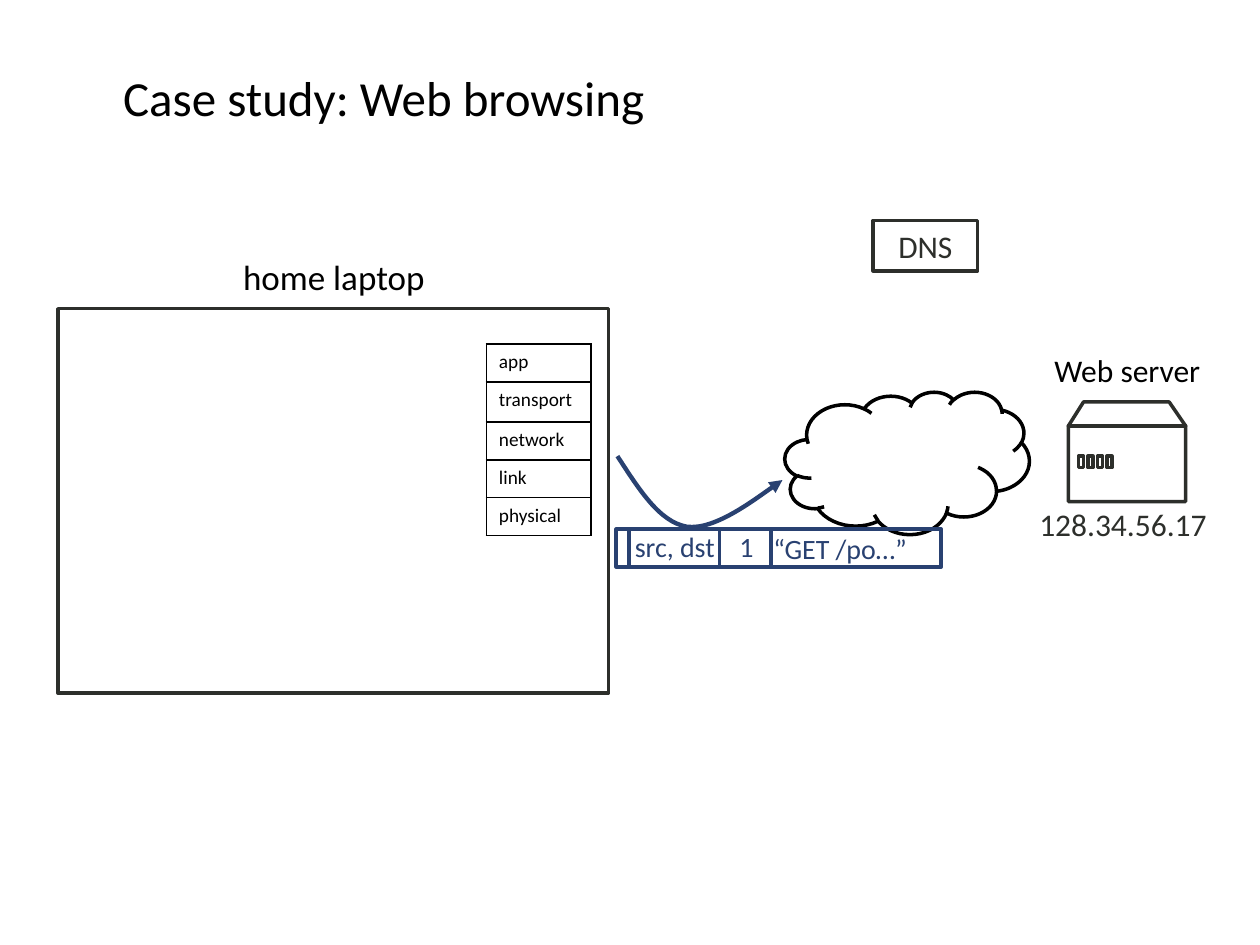
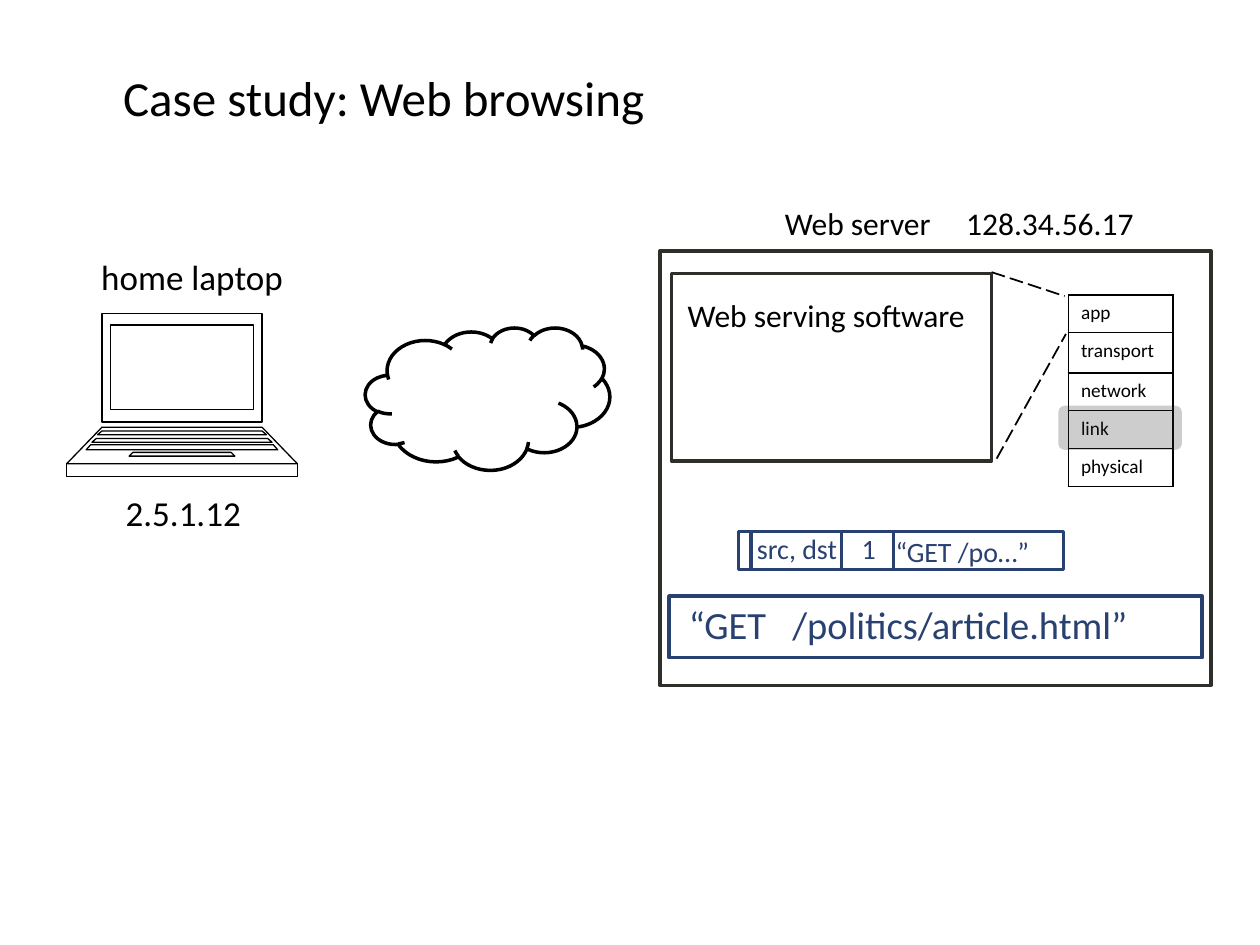
"""Build two slides that follow a web request from a home laptop to a web server."""
from itertools import accumulate

from pptx import Presentation
from pptx.dml.color import RGBColor
from pptx.enum.dml import MSO_LINE
from pptx.enum.shapes import MSO_CONNECTOR, MSO_SHAPE
from pptx.enum.text import MSO_ANCHOR, PP_ALIGN
from pptx.oxml import parse_xml
from pptx.oxml.ns import nsdecls, qn
from pptx.util import Inches, Pt


class T:
    font = "Calibri"
    black = RGBColor.from_string("000000")
    white = RGBColor.from_string("FFFFFF")
    dark = RGBColor.from_string("2D2F2B")
    blue = RGBColor.from_string("294171")
    title, request, heading, label, packet, layer = 28, 22, 20, 18, 16, 11
    hair, thin, line, arrow = 0.75, 1, 2, 2.5


def write(tf, text, size, color=T.black, align=PP_ALIGN.LEFT, tab=None):
    p = tf.paragraphs[0]
    p.alignment = align
    if tab:
        p._p.get_or_add_pPr().append(parse_xml(
            f'<a:tabLst {nsdecls("a")}><a:tab pos="{Inches(tab)}" algn="l"/></a:tabLst>'))
    r = p.add_run()
    r.text = text
    r.font.color.rgb = color
    for name, value in {"name": T.font, "size": Pt(size), "bold": False}.items():
        setattr(r.font, name, value)


def add(s, at, kind=None, line=None, fill=None, text=None, **style):
    at = [Inches(v) for v in at]
    if kind is None:
        sp = s.shapes.add_textbox(*at)
    else:
        sp = s.shapes.add_shape(kind, *at)
        sp.shadow.inherit = False
        if fill is None:
            sp.fill.background()
        else:
            sp.fill.solid()
            sp.fill.fore_color.rgb = fill
        if line is None:
            sp.line.fill.background()
        else:
            sp.line.color.rgb = line
            sp.line.width = Pt(T.line)
    if text:
        sp.text_frame.word_wrap = True
        sp.text_frame.vertical_anchor = MSO_ANCHOR.MIDDLE if kind else MSO_ANCHOR.TOP
        write(sp.text_frame, text, **style)
    return sp


RECT = MSO_SHAPE.RECTANGLE
CENTER = PP_ALIGN.CENTER
layers = ["app", "transport", "network", "link", "physical"]
row_heights = [0.3, 0.32, 0.3, 0.3, 0.3]
field_widths = [0.1, 0.72, 0.41, 1.35]
field_texts = [("src, dst", 0.05, -0.05, 0.9), ("1", 0.88, -0.05, 0.24),
               ("“GET /po…”", 1.15, -0.03, 1.66)]

prs = Presentation()
prs.slide_width, prs.slide_height = Inches(10), Inches(7.5)
places = [
    {"cloud": (6.23, 3.11), "laptop": (0.46, 4.38), "host": (0.46, 2.45, 4.37, 3.05),
     "stack": (3.86, 2.73), "packet": (4.89, 4.2)},
    {"cloud": (2.9, 2.6), "laptop": (0.39, 2.27), "host": (5.24, 1.99, 4.37, 3.45),
     "stack": (8.48, 2.34), "packet": (5.86, 4.22)},
]
for place in places:
    s = prs.slides.add_slide(prs.slide_layouts[6])
    add(s, (0.88, 0.49, 9.3, 0.57), text="Case study: Web browsing", size=T.title)
    add(s, (*place["cloud"], 1.94, 1.13), MSO_SHAPE.CLOUD, T.black, T.white)
    x, w = place["laptop"]
    add(s, (x, 1.98, w, 0.44), text="home laptop", size=T.heading, align=CENTER)
    add(s, place["host"], RECT, T.dark)

    x, y = place["stack"]
    tbl = s.shapes.add_table(len(layers), 1, Inches(x), Inches(y),
                             Inches(0.83), Inches(sum(row_heights))).table
    tbl.first_row = tbl.horz_banding = False
    for i, (layer, h) in enumerate(zip(layers, row_heights)):
        tbl.rows[i].height = Inches(h)
        cell = tbl.cell(i, 0)
        cell.fill.background()
        write(cell.text_frame, layer, T.layer)
        for j, side in enumerate("LRTB"):
            cell._tc.get_or_add_tcPr().insert(j, parse_xml(
                f'<a:ln{side} {nsdecls("a")} w="{Pt(T.thin)}"><a:solidFill>'
                f'<a:srgbClr val="{T.black}"/></a:solidFill></a:ln{side}>'))

    x, y = place["packet"]
    for w, end in zip(field_widths, accumulate(field_widths)):
        add(s, (x + end - w, y, w, 0.3), RECT, T.blue)
    for text, dx, dy, w in field_texts:
        add(s, (x + dx, y + dy, w, 0.37), text=text, size=T.packet, color=T.blue)

s1, s2 = prs.slides

add(s1, (8.27, 2.74, 1.5, 0.4), text="Web server", size=T.label)
add(s1, (8.15, 3.96, 1.58, 0.4), text="128.34.56.17", size=T.label, color=T.dark)
add(s1, (6.93, 1.75, 0.83, 0.4), RECT, T.dark,
    text="DNS", size=T.label, color=T.dark, align=CENTER)

add(s2, (6.13, 1.57, 3.11, 0.4), text="Web server\t128.34.56.17", size=T.label, tab=1.44)
link = add(s2, (8.4, 3.22, 0.98, 0.35), MSO_SHAPE.ROUNDED_RECTANGLE, fill=T.dark)
link.adjustments[0] = 0.14
link._element.spPr.find(qn("a:solidFill"))[0].append(
    parse_xml(f'<a:alpha {nsdecls("a")} val="24000"/>'))
add(s2, (0.32, 3.85, 2.27, 0.44), text="2.5.1.12", size=T.heading, align=CENTER)
for ends in [(7.91, 3.64, 8.46, 2.65), (7.87, 2.16, 8.45, 2.35)]:
    zoom = s2.shapes.add_connector(MSO_CONNECTOR.STRAIGHT, *[Inches(v) for v in ends])
    zoom.line.color.rgb = T.black
    zoom.line.width = Pt(T.thin)
    zoom.line.dash_style = MSO_LINE.LONG_DASH
    zoom._element.spPr.append(parse_xml(f'<a:effectLst {nsdecls("a")}/>'))
add(s2, (5.33, 2.17, 2.54, 1.49), RECT, T.dark)
add(s2, (5.36, 2.3, 2.48, 0.4), text="Web serving software", size=T.label)
add(s2, (5.31, 4.73, 4.23, 0.49), RECT, T.blue)
add(s2, (5.37, 4.72, 4.23, 0.47), text="“GET\t/politics/article.html”",
    size=T.request, color=T.blue, tab=0.82)

server = [[(8.48, 3.38), (8.6, 3.19), (9.28, 3.19), (9.41, 3.38), (9.41, 3.98), (8.48, 3.98)],
          [(8.48, 3.38), (9.41, 3.38)]]
for i in range(4):
    x = 8.56 + i * 0.075
    server.append([(x, 3.62), (x, 3.71), (x + 0.04, 3.71), (x + 0.04, 3.62)])

laptop_mid = 1.445
laptop_bands = [(2.49, 0.635, 3.35, 0.635), (2.58, 0.57, 3.25, 0.57),
                (3.39, 0.635, 3.68, 0.915), (3.68, 0.915, 3.78, 0.915),
                (3.42, 0.635, 3.45, 0.67), (3.48, 0.68, 3.51, 0.715),
                (3.53, 0.725, 3.57, 0.76), (3.59, 0.39, 3.62, 0.42)]
laptop = [[(laptop_mid - a, top), (laptop_mid + a, top),
           (laptop_mid + b, bottom), (laptop_mid - b, bottom)]
          for top, a, bottom, b in laptop_bands]

route = [[(4.9, 3.62), (5.07, 3.88), (5.23, 4.14), (5.45, 4.18),
          (5.67, 4.21), (6.21, 3.81), (6.21, 3.81)]]

outlines = [(s1, server, T.dark, T.line, True), (s2, laptop, T.black, T.hair, True),
            (s1, route, T.blue, T.arrow, False)]
for s, contours, color, width, closed in outlines:
    contours = [[(Inches(x), Inches(y)) for x, y in c] for c in contours]
    fb = s.shapes.build_freeform(*contours[0][0])
    for i, contour in enumerate(contours):
        if i:
            fb.move_to(*contour[0])
        fb.add_line_segments(contour[1:], close=closed)
    sp = fb.convert_to_shape()
    sp.shadow.inherit = False
    sp.fill.background()
    sp.line.color.rgb = color
    sp.line.width = Pt(width)

steps = list(sp._element.iter(qn("a:lnTo")))
for i in range(0, len(steps), 3):
    curve = parse_xml(f'<a:cubicBezTo {nsdecls("a")}/>')
    steps[i].addprevious(curve)
    for step in steps[i:i + 3]:
        curve.append(step[0])
        step.getparent().remove(step)
sp.line._get_or_add_ln().append(parse_xml(f'<a:tailEnd {nsdecls("a")} type="triangle"/>'))

prs.save("out.pptx")
